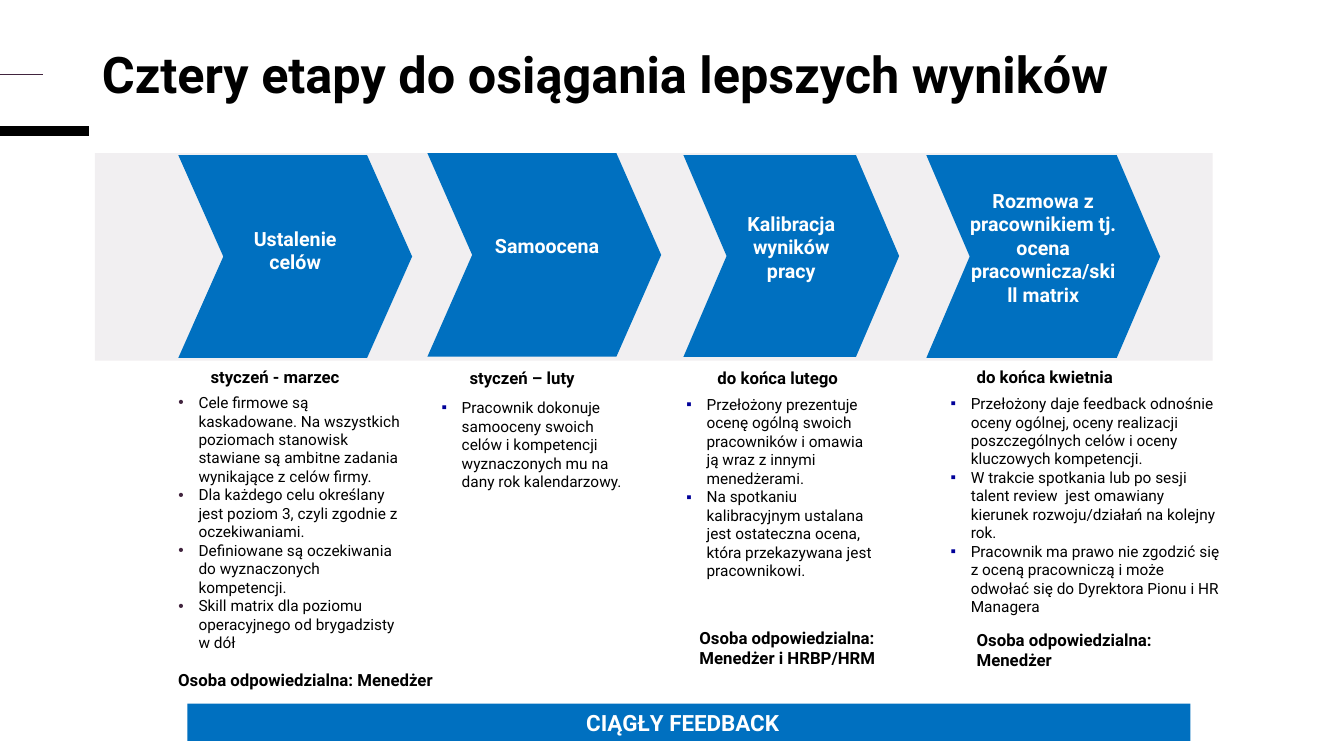
from lxml.etree import SubElement
from pptx import Presentation
from pptx.dml.color import RGBColor
from pptx.enum.shapes import MSO_CONNECTOR, MSO_SHAPE
from pptx.enum.text import MSO_ANCHOR, MSO_AUTO_SIZE, PP_ALIGN
from pptx.oxml.ns import qn
from pptx.util import Pt

FONT = "Roboto"
BLACK, WHITE, BLUE, PLUM, NAVY = "000000", "FFFFFF", "0070C0", "41243E", "000099"
TITLE = "Cztery etapy do osiągania lepszych wyników"
TITLE_BOX = (65.5, 33.8, 796.3, 59.8)
BAND_BOX = (67.7, 109.4, 798.5, 148.3)
FEEDBACK = "CIĄGŁY FEEDBACK"
FEEDBACK_BOX = (133.9, 502.6, 716.4, 26.6)
MARGINS = (7.2, 3.6, 7.2, 3.6)
FEEDBACK_MARGINS = (7.2, 3.6, 16, 3.6)
SIDE_LINES = [(93.6, 63.4, 6.75, BLACK), (53.3, 31, 1, PLUM)]

STAGES = [
    {
        "name": "Ustalenie celów",
        "chevron": (127.4, 110.9, 167, 144.7), "notch": 0.222, "margins": (6, 4, 6, 13),
        "date": "styczeń - marzec", "date_box": (143.3, 258.5, 114.5, 21.6),
        "bullet": ("•", PLUM), "list_box": (120.2, 277.2, 178.6, 186.5),
        "tasks": [
            "Cele firmowe są kaskadowane. Na wszystkich poziomach stanowisk stawiane są ambitne zadania wynikające z celów firmy.",
            "Dla każdego celu określany jest poziom 3, czyli zgodnie z oczekiwaniami.",
            "Definiowane są oczekiwania do wyznaczonych kompetencji.",
            "Skill matrix dla poziomu operacyjnego od brygadzisty w dół",
        ],
        "owner": "Osoba odpowiedzialna: Menedżer", "owner_box": (120.2, 475.2, 309.6, 21.6),
    },
    {
        "name": "Samoocena",
        "chevron": (305.3, 109.4, 167, 145.4), "notch": 0.22, "margins": (4, 0, 0, 13),
        "date": "styczeń – luty", "date_box": (328.3, 259.2, 97.2, 21.6),
        "bullet": ("▪", NAVY), "list_box": (308.2, 280.8, 151.2, 74.2),
        "tasks": [
            "Pracownik dokonuje samooceny swoich celów i kompetencji wyznaczonych mu na dany rok kalendarzowy.",
        ],
    },
    {
        "name": "Kalibracja wyników pracy",
        "chevron": (488.2, 110.9, 154.1, 144), "notch": 0.214, "margins": (2, 0, 2, 13),
        "date": "do końca lutego", "date_box": (505.4, 259.2, 111.6, 21.6),
        "bullet": ("▪", NAVY), "list_box": (483.1, 278.6, 149, 140.4),
        "tasks": [
            "Przełożony prezentuje ocenę ogólną swoich pracowników i omawia ją wraz z innymi menedżerami.",
            "Na spotkaniu kalibracyjnym ustalana jest ostateczna ocena, która przekazywana jest pracownikowi.",
        ],
        "owner": "Osoba odpowiedzialna: Menedżer i HRBP/HRM", "owner_box": (492.5, 445, 164.2, 36),
    },
    {
        "name": "Rozmowa z pracownikiem tj. ocena pracownicza/skill matrix",
        "chevron": (661.7, 110.9, 167, 144.7), "notch": 0.214, "margins": (0, 0, 0, 13),
        "date": "do końca kwietnia", "date_box": (690.5, 258.5, 123.8, 21.6),
        "bullet": ("▪", NAVY), "list_box": (671.8, 277.9, 210.2, 167),
        "tasks": [
            "Przełożony daje feedback odnośnie oceny ogólnej, oceny realizacji poszczególnych celów i oceny kluczowych kompetencji.",
            "W trakcie spotkania lub po sesji talent review  jest omawiany kierunek rozwoju/działań na kolejny rok.",
            "Pracownik ma prawo nie zgodzić się z oceną pracowniczą i może odwołać się do Dyrektora Pionu i HR Managera",
        ],
        "owner": "Osoba odpowiedzialna: Menedżer", "owner_box": (690.5, 446.4, 164.2, 36),
    },
]


def color(value):
    return RGBColor.from_string(value)


def place(shape, box):
    shape.left, shape.top, shape.width, shape.height = map(Pt, box)


def write(shape, texts, size, ink=BLACK, bold=True, align=PP_ALIGN.LEFT,
          anchor=MSO_ANCHOR.TOP, margins=MARGINS, spacing=1.0, bullet=None):
    frame = shape.text_frame
    frame.word_wrap = True
    frame.auto_size = MSO_AUTO_SIZE.NONE
    frame.vertical_anchor = anchor
    frame.margin_left, frame.margin_top, frame.margin_right, frame.margin_bottom = map(Pt, margins)
    for index, text in enumerate(texts):
        paragraph = frame.add_paragraph() if index else frame.paragraphs[0]
        paragraph.alignment = align
        paragraph.line_spacing = spacing
        paragraph.space_before = paragraph.space_after = Pt(0)
        run = paragraph.add_run()
        run.text = text
        run.font.name, run.font.size, run.font.bold = FONT, Pt(size), bold
        run.font.color.rgb = color(ink)
        if bullet:
            add_bullet(paragraph, *bullet)


def add_bullet(paragraph, mark, ink):
    properties = paragraph._p.get_or_add_pPr()
    properties.set("marL", str(Pt(14.4)))
    properties.set("indent", str(Pt(-14.4)))
    bullet_color = SubElement(properties, qn("a:buClr"))
    SubElement(bullet_color, qn("a:srgbClr"), val=ink)
    SubElement(properties, qn("a:buChar"), char=mark)


def add_filled(slide, kind, box, fill):
    shape = slide.shapes.add_shape(kind, *map(Pt, box))
    shape.shadow.inherit = False
    shape.fill.solid()
    shape.fill.fore_color.rgb = color(fill)
    shape.line.fill.background()
    return shape


def add_label(slide, text, box):
    write(slide.shapes.add_textbox(*map(Pt, box)), [text], 12)


def add_stage(slide, stage, placeholder):
    place(placeholder, stage["list_box"])
    placeholder.fill.solid()
    placeholder.fill.fore_color.rgb = color(WHITE)
    write(placeholder, stage["tasks"], 11, bold=False, bullet=stage["bullet"])
    chevron = add_filled(slide, MSO_SHAPE.CHEVRON, stage["chevron"], BLUE)
    chevron.adjustments[0] = stage["notch"]
    write(chevron, [stage["name"]], 14, WHITE, align=PP_ALIGN.CENTER,
          anchor=MSO_ANCHOR.MIDDLE, margins=stage["margins"])
    add_label(slide, stage["date"], stage["date_box"])
    if "owner" in stage:
        add_label(slide, stage["owner"], stage["owner_box"])


def main():
    presentation = Presentation()
    presentation.slide_width, presentation.slide_height = Pt(960), Pt(540)
    slide = presentation.slides.add_slide(presentation.slide_layouts.get_by_name("Comparison"))
    for top, length, weight, ink in SIDE_LINES:
        line = slide.shapes.add_connector(MSO_CONNECTOR.STRAIGHT, 0, Pt(top), Pt(length), Pt(top))
        line.line.width = Pt(weight)
        line.line.color.rgb = color(ink)
        SubElement(line._element.spPr, qn("a:effectLst"))
    title = slide.shapes.title
    place(title, TITLE_BOX)
    write(title, [TITLE], 36, spacing=0.85)
    band = add_filled(slide, MSO_SHAPE.RECTANGLE, BAND_BOX, PLUM)
    band_color = band._element.spPr.find(qn("a:solidFill")).find(qn("a:srgbClr"))
    SubElement(band_color, qn("a:alpha"), val="7000")
    for index, stage in enumerate(STAGES, start=1):
        add_stage(slide, stage, slide.placeholders[index])
    feedback = add_filled(slide, MSO_SHAPE.RECTANGLE, FEEDBACK_BOX, BLUE)
    write(feedback, [FEEDBACK], 16, WHITE, align=PP_ALIGN.CENTER,
          anchor=MSO_ANCHOR.MIDDLE, margins=FEEDBACK_MARGINS)
    presentation.save("out.pptx")


if __name__ == "__main__":
    main()
